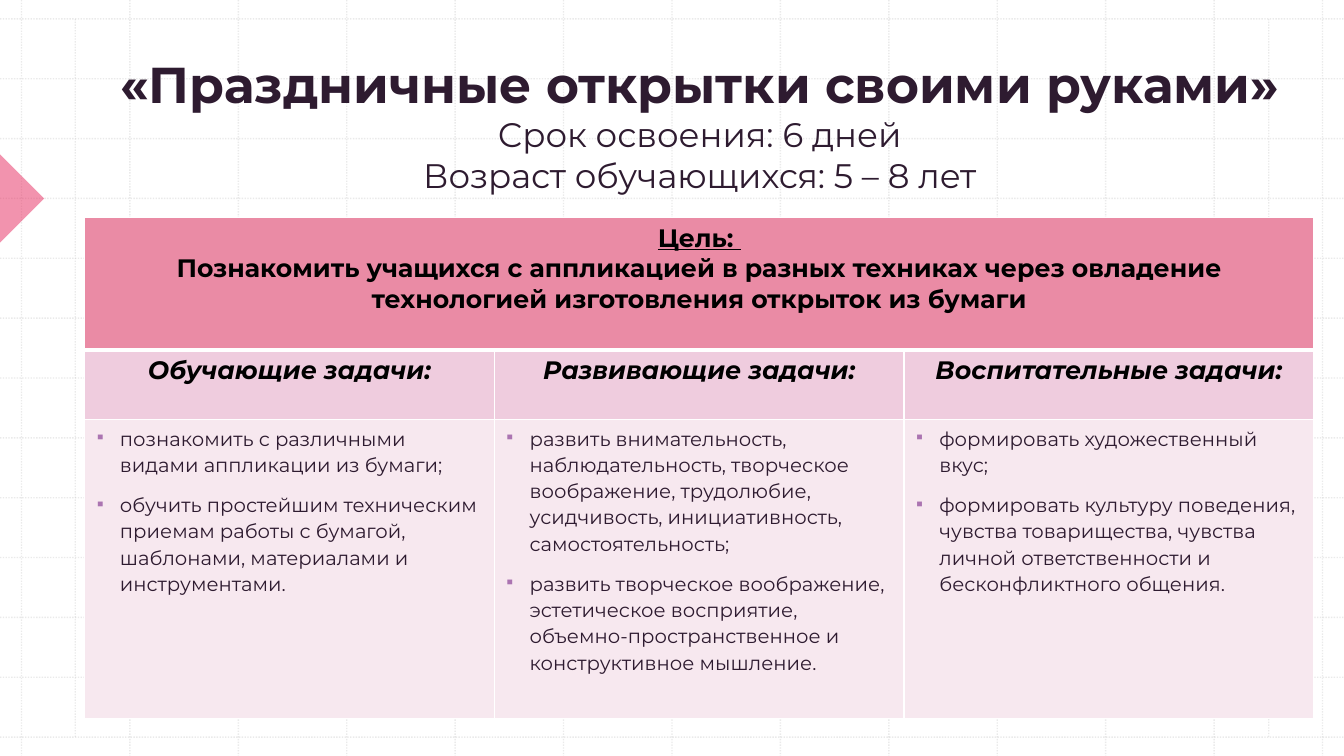
from dataclasses import dataclass

import pptx
import pptx.dml.color
import pptx.enum.dml
import pptx.enum.shapes
import pptx.enum.text
import pptx.oxml
import pptx.oxml.ns
import pptx.util

RGBColor = pptx.dml.color.RGBColor
WHITE = RGBColor(0xFF, 0xFF, 0xFF)
BLACK = RGBColor(0x00, 0x00, 0x00)
PLUM = RGBColor(0x2E, 0x1B, 0x30)
LILAC = RGBColor(0xAB, 0x74, 0xB1)
GRID_GRAY = RGBColor(0xBC, 0xBC, 0xBC)
CRIMSON = RGBColor(0xE7, 0x29, 0x5E)
GOAL_PINK = RGBColor(0xEA, 0x8B, 0xA5)
HEADING_PINK = RGBColor(0xEF, 0xCC, 0xDE)
TASK_PINK = RGBColor(0xF7, 0xE8, 0xEF)

FONT = "Montserrat"
CENTER = pptx.enum.text.PP_ALIGN.CENTER
SLIDE_WIDTH = pptx.util.Inches(13.33)
SLIDE_HEIGHT = pptx.util.Inches(7.5)
GRID_STEPS = 12

TITLE_FORMAT = {"name": FONT, "size": pptx.util.Pt(36), "bold": True}
SUBTITLE_FORMAT = {"name": FONT, "size": pptx.util.Pt(24.3), "bold": False}
GOAL_FORMAT = {"name": FONT, "size": pptx.util.Pt(18), "bold": True}
GOAL_LABEL_FORMAT = {**GOAL_FORMAT, "underline": True}
HEADING_FORMAT = {**GOAL_FORMAT, "italic": True}
TASK_FORMAT = {"name": FONT, "size": pptx.util.Pt(14), "bold": False}
CENTERED = {"alignment": CENTER}
TASK_PARAGRAPH = {"line_spacing": 1.1, "space_before": pptx.util.Pt(10)}


@dataclass(frozen=True)
class Frame:
    """A rectangle in percent of the slide's width and height."""
    left: float
    top: float
    width: float
    height: float

    def box(self) -> tuple[int, int, int, int]:
        return (across(self.left), down(self.top),
                across(self.width), down(self.height))


@dataclass(frozen=True)
class GridLine:
    """A straight line between two points in percent of the slide's size."""
    start: tuple[float, float]
    end: tuple[float, float]


@dataclass(frozen=True)
class TextLine:
    text: str
    font: dict
    color: RGBColor
    paragraph: dict
    bulleted: bool = False


@dataclass(frozen=True)
class TaskColumn:
    heading: str
    tasks: tuple[str, ...]


GRID = Frame(1.6, 2.5, 96.8, 95)
MARGINS = (5.6, 94.4)
TITLE = Frame(5.33, 6.8, 93.47, 19.07)
TABLE = Frame(6.3, 28.8, 91.45, 66.21)
ROW_HEIGHTS = (17.47, 9.27, 39.47)
MARKER_SIDE = 4.65
MARKER_ROW = 3

TITLE_LINES = (
    TextLine("«Праздничные открытки своими руками»", TITLE_FORMAT, PLUM, CENTERED),
    TextLine("Срок освоения: 6 дней", SUBTITLE_FORMAT, PLUM, CENTERED),
    TextLine("Возраст обучающихся: 5 – 8 лет", SUBTITLE_FORMAT, PLUM, CENTERED),
)
GOAL_LINES = (
    TextLine("Цель: ", GOAL_LABEL_FORMAT, BLACK, CENTERED),
    TextLine("Познакомить учащихся с аппликацией в разных техниках через овладение "
             "технологией изготовления открыток из бумаги", GOAL_FORMAT, BLACK, CENTERED),
)
TASK_COLUMNS = (
    TaskColumn("Обучающие задачи:", (
        "познакомить с различными видами аппликации из бумаги;",
        "обучить простейшим техническим приемам работы с бумагой, шаблонами, "
        "материалами и инструментами.")),
    TaskColumn("Развивающие задачи:", (
        "развить внимательность, наблюдательность, творческое воображение, "
        "трудолюбие, усидчивость, инициативность, самостоятельность;",
        "развить творческое воображение, эстетическое восприятие, "
        "объемно-пространственное и конструктивное мышление.")),
    TaskColumn("Воспитательные задачи:", (
        "формировать художественный вкус;",
        "формировать культуру поведения, чувства товарищества, чувства личной "
        "ответственности и бесконфликтного общения.")),
)


def across(percent: float) -> int:
    return round(SLIDE_WIDTH * percent / 100)


def down(percent: float) -> int:
    return round(SLIDE_HEIGHT * percent / 100)


def apply_format(target, values: dict) -> None:
    for name, value in values.items():
        setattr(target, name, value)


def parse_drawing(tag: str, attributes: str = "", content: str = ""):
    """Build one element of the DrawingML namespace."""
    namespace = pptx.oxml.ns.nsdecls("a")
    return pptx.oxml.parse_xml(f"<a:{tag} {namespace} {attributes}>{content}</a:{tag}>")


def set_opacity(shape, percent: int) -> None:
    for color in shape.element.spPr.iter(pptx.oxml.ns.qn("a:srgbClr")):
        color.append(parse_drawing("alpha", f'val="{percent * 1000}"'))


def add_bullet(paragraph) -> None:
    properties = paragraph._p.get_or_add_pPr()
    indent = pptx.util.Inches(0.25)
    properties.set("marL", str(indent))
    properties.set("indent", str(-indent))
    properties.append(parse_drawing("buClr", content=f'<a:srgbClr val="{LILAC}"/>'))
    properties.append(parse_drawing("buSzPct", 'val="75000"'))
    properties.append(parse_drawing("buChar", 'char="▪"'))


def write_lines(text_frame, lines: tuple[TextLine, ...]) -> None:
    for index, line in enumerate(lines):
        paragraph = text_frame.add_paragraph() if index else text_frame.paragraphs[0]
        apply_format(paragraph, line.paragraph)
        if line.bulleted:
            add_bullet(paragraph)
        run = paragraph.add_run()
        run.text = line.text
        apply_format(run.font, line.font)
        run.font.color.rgb = line.color


def grid_lines() -> list[GridLine]:
    columns = [GRID.left + GRID.width * step / GRID_STEPS for step in range(GRID_STEPS + 1)]
    rows = [GRID.top + GRID.height * step / GRID_STEPS for step in range(GRID_STEPS + 1)]
    return ([GridLine((column, 0), (column, 100)) for column in columns]
            + [GridLine((0, row), (100, row)) for row in rows]
            + [GridLine((margin, rows[0]), (margin, rows[-1])) for margin in MARGINS])


def draw_grid_line(slide, line: GridLine) -> None:
    connector = slide.shapes.add_connector(
        pptx.enum.shapes.MSO_CONNECTOR.STRAIGHT,
        across(line.start[0]), down(line.start[1]), across(line.end[0]), down(line.end[1]))
    connector.line.color.rgb = GRID_GRAY
    apply_format(connector.line, {"width": pptx.util.Pt(1),
                                  "dash_style": pptx.enum.dml.MSO_LINE.ROUND_DOT})
    set_opacity(connector, 30)
    connector.element.spPr.append(parse_drawing("effectLst"))


def draw_marker(slide) -> None:
    """Draw the triangle that points in from the left edge."""
    side = across(MARKER_SIDE)
    center = down(GRID.top + GRID.height * MARKER_ROW / GRID_STEPS)
    marker = slide.shapes.add_shape(pptx.enum.shapes.MSO_SHAPE.RIGHT_TRIANGLE,
                                    -side // 2, center - side // 2, side, side)
    marker.rotation = 225
    marker.shadow.inherit = False
    marker.fill.solid()
    marker.fill.fore_color.rgb = CRIMSON
    marker.line.fill.background()
    set_opacity(marker, 50)


def draw_title(slide) -> None:
    title = slide.shapes.title
    title.element.getparent().append(title.element)
    apply_format(title, dict(zip(("left", "top", "width", "height"), TITLE.box())))
    apply_format(title.text_frame, {
        "margin_top": 0, "margin_bottom": 0, "word_wrap": True,
        "auto_size": pptx.enum.text.MSO_AUTO_SIZE.NONE,
        "vertical_anchor": pptx.enum.text.MSO_ANCHOR.BOTTOM})
    write_lines(title.text_frame, TITLE_LINES)


def style_cell(cell, fill: RGBColor, top: int = 1, bottom: int = 1) -> None:
    """Fill a cell and give it white borders, with widths in points."""
    properties = cell._tc.get_or_add_tcPr()
    for side, points in {"L": 1, "R": 1, "T": top, "B": bottom}.items():
        properties.append(parse_drawing(
            f"ln{side}", f'w="{pptx.util.Pt(points)}"',
            f'<a:solidFill><a:srgbClr val="{WHITE}"/></a:solidFill>'))
    cell.fill.solid()
    cell.fill.fore_color.rgb = fill


def draw_table(slide) -> None:
    table = slide.shapes.add_table(len(ROW_HEIGHTS), len(TASK_COLUMNS), *TABLE.box()).table
    apply_format(table, {"first_row": False, "horz_banding": False})
    for row, height in zip(table.rows, ROW_HEIGHTS):
        row.height = down(height)
    goal = table.cell(0, 0)
    goal.merge(table.cell(0, len(TASK_COLUMNS) - 1))
    write_lines(goal.text_frame, GOAL_LINES)
    for index, column in enumerate(TASK_COLUMNS):
        goal_part, heading, tasks = (table.cell(row, index) for row in range(3))
        style_cell(goal_part, GOAL_PINK, bottom=3)
        style_cell(heading, HEADING_PINK, top=3)
        style_cell(tasks, TASK_PINK)
        write_lines(heading.text_frame,
                    (TextLine(column.heading, HEADING_FORMAT, BLACK, CENTERED),))
        write_lines(tasks.text_frame, tuple(
            TextLine(task, TASK_FORMAT, PLUM, TASK_PARAGRAPH, bulleted=True)
            for task in column.tasks))


def main() -> None:
    presentation = pptx.Presentation()
    apply_format(presentation, {"slide_width": SLIDE_WIDTH, "slide_height": SLIDE_HEIGHT})
    slide = presentation.slides.add_slide(presentation.slide_layouts.get_by_name("Title Only"))
    for line in grid_lines():
        draw_grid_line(slide, line)
    draw_marker(slide)
    draw_title(slide)
    draw_table(slide)
    presentation.save("out.pptx")


if __name__ == "__main__":
    main()
